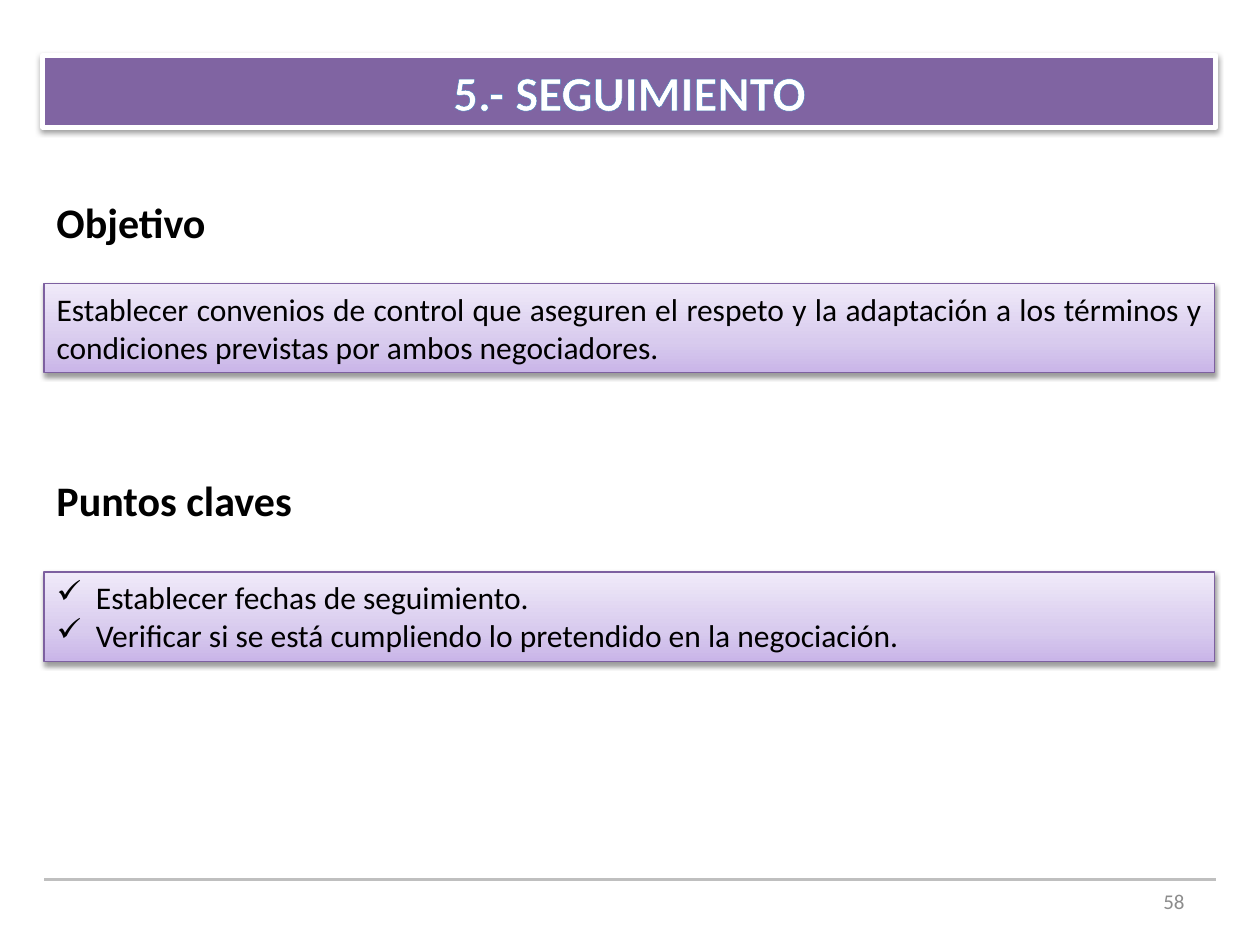
"""Build the follow-up slide: a title bar and two headed panels."""
from pptx import Presentation
from pptx import util as u
from pptx.dml.color import RGBColor
from pptx.enum import shapes, text
from pptx.oxml import parse_xml
from pptx.oxml.ns import nsdecls

TITLE = "5.- SEGUIMIENTO"
PAGE = "58"
SECTIONS = [
    {"heading": "Objetivo", "heading_top": 108.7, "panel_top": 162, "bullet": None,
     "lines": ["Establecer convenios de control que aseguren el respeto y la adaptación "
               "a los términos y condiciones previstas por ambos negociadores."]},
    {"heading": "Puntos claves", "heading_top": 267.8, "panel_top": 326.9, "bullet": "✓",
     "lines": ["Establecer fechas de seguimiento.",
               "Verificar si se está cumpliendo lo pretendido en la negociación."]},
]
GRADIENT = [(0, "C9B5E8"), (35, "D8CBEE"), (100, "F0EAF9")]

FONT = "Calibri"
LEFT, WIDTH, PANEL_HEIGHT = 25.2, 669, 51
INDENT = 22.5
BLACK = RGBColor(0x00, 0x00, 0x00)
WHITE = RGBColor(0xFF, 0xFF, 0xFF)
PURPLE = RGBColor(0x80, 0x64, 0xA2)
BORDER = RGBColor(0x7D, 0x60, 0xA0)
RULE = RGBColor(0xBF, 0xBF, 0xBF)
GREY = RGBColor(0x8C, 0x8C, 0x8C)


def add_xml(parent, body, index=None):
    tag, rest = body.split(">", 1) if "/>" not in body.split(">", 1)[0] + ">" else (body[:-2], None)
    xml = f"{tag} {nsdecls('a')}" + ("/>" if rest is None else f">{rest}")
    parent.insert(len(parent) if index is None else index, parse_xml(xml))


def add_shadow(sp):
    add_xml(sp._element.spPr,
            f'<a:effectLst><a:outerShdw blurRad="{u.Pt(3.1)}" dist="{u.Pt(1.6)}" dir="5400000" '
            'rotWithShape="0"><a:srgbClr val="000000"><a:alpha val="38000"/></a:srgbClr>'
            '</a:outerShdw></a:effectLst>')


def place(sp, left, top, width, height):
    sp.left, sp.top, sp.width, sp.height = (u.Pt(v) for v in (left, top, width, height))


def style(p, size, color, bold=False, align=text.PP_ALIGN.LEFT):
    p.alignment = align
    p.font.name, p.font.size, p.font.bold = FONT, u.Pt(size), bold
    p.font.color.rgb = color


def add_label(slide, label, box, *look):
    sp = slide.shapes.add_textbox(*(u.Pt(v) for v in box))
    tf = sp.text_frame
    tf.word_wrap = True
    tf.vertical_anchor = text.MSO_ANCHOR.MIDDLE
    tf.text = label
    style(tf.paragraphs[0], *look)


def add_title(slide):
    sp = slide.shapes.title
    place(sp, 24.5, 31.7, 670.3, 41)
    sp.fill.solid()
    sp.fill.fore_color.rgb = PURPLE
    sp.line.color.rgb, sp.line.width = WHITE, u.Pt(3)
    add_shadow(sp)
    tf = sp.text_frame
    tf.auto_size = text.MSO_AUTO_SIZE.NONE
    tf.vertical_anchor = text.MSO_ANCHOR.MIDDLE
    p = tf.paragraphs[0]
    r = p.add_run()
    r.text = TITLE
    style(p, 28, WHITE, True, text.PP_ALIGN.CENTER)
    add_xml(r._r.get_or_add_rPr(),
            f'<a:ln w="{u.Pt(0.83)}"><a:solidFill><a:srgbClr val="467AB8"/></a:solidFill></a:ln>', 0)


def add_panel(slide, top, lines, bullet):
    sp = slide.shapes.add_shape(shapes.MSO_SHAPE.RECTANGLE, u.Pt(LEFT), u.Pt(top),
                                u.Pt(WIDTH), u.Pt(PANEL_HEIGHT))
    stops = "".join(f'<a:gs pos="{pos * 1000}"><a:srgbClr val="{color}"/></a:gs>'
                    for pos, color in GRADIENT)
    add_xml(sp._element.spPr, f'<a:gradFill rotWithShape="1"><a:gsLst>{stops}</a:gsLst>'
                              '<a:lin ang="16200000" scaled="0"/></a:gradFill>')
    sp.line.color.rgb, sp.line.width = BORDER, u.Pt(0.75)
    add_shadow(sp)
    tf = sp.text_frame
    tf.word_wrap = True
    tf.vertical_anchor = text.MSO_ANCHOR.TOP
    tf.text = "\n".join(lines)
    for p in tf.paragraphs:
        if bullet:
            pPr = p._p.get_or_add_pPr()
            pPr.set("marL", str(u.Pt(INDENT)))
            pPr.set("indent", str(-u.Pt(INDENT)))
            add_xml(pPr, f'<a:buChar char="{bullet}"/>')
        style(p, 18, BLACK, False, text.PP_ALIGN.LEFT if bullet else text.PP_ALIGN.JUSTIFY)


def main():
    prs = Presentation()
    prs.slide_width, prs.slide_height = u.Pt(720), u.Pt(540)
    slide = prs.slides.add_slide(prs.slide_layouts[5])
    rule = slide.shapes.add_connector(shapes.MSO_CONNECTOR.STRAIGHT, u.Pt(LEFT), u.Pt(502.5),
                                      u.Pt(720 - LEFT), u.Pt(502.5))
    rule.line.color.rgb, rule.line.width = RULE, u.Pt(2)
    add_xml(rule._element.spPr, "<a:effectLst/>")
    add_label(slide, PAGE, (516, 500.5, 168, 28.75), 12, GREY, False, text.PP_ALIGN.RIGHT)
    add_title(slide)
    for section in SECTIONS:
        add_label(slide, section["heading"], (LEFT, section["heading_top"], 238, 36),
                  24, BLACK, True)
        add_panel(slide, section["panel_top"], section["lines"], section["bullet"])
    prs.save("out.pptx")


if __name__ == "__main__":
    main()
